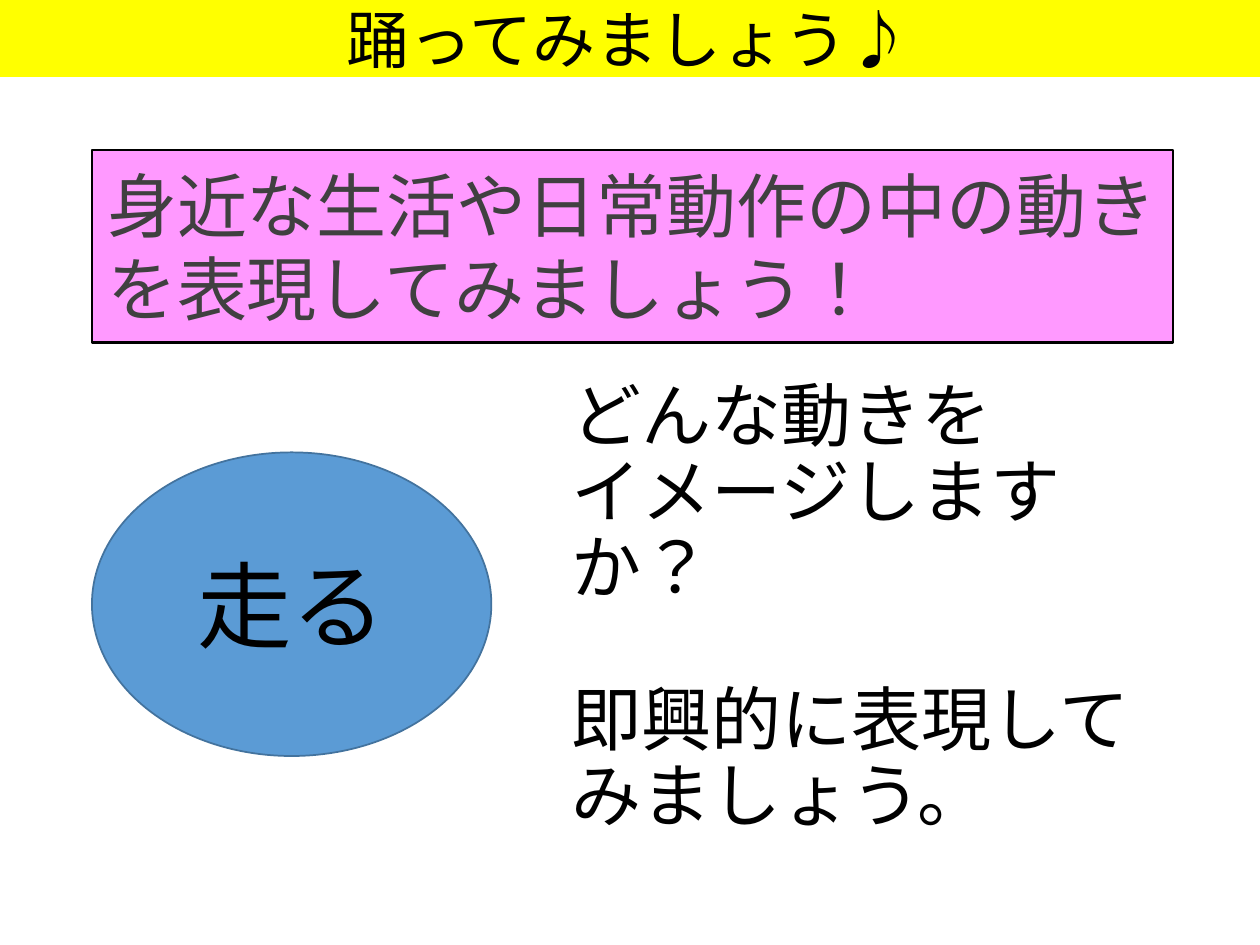
"""Build a dance lesson slide with a theme word and a prompt."""
from dataclasses import dataclass

from pptx import Presentation
from pptx.dml.color import RGBColor as Rgb
from pptx.enum.lang import MSO_LANGUAGE_ID as Lang
from pptx.enum.shapes import MSO_SHAPE as Shape
from pptx.enum.text import MSO_ANCHOR as Anchor, PP_ALIGN as Align
from pptx.oxml.ns import qn
from pptx.util import Inches, Pt


@dataclass(frozen=True)
class Theme:
    font: str = "Noto Sans CJK JP"
    ink: str = "000000"
    gray: str = "404040"
    pink: str = "FF99FF"
    blue: str = "5B9BD5"
    edge: str = "43739E"
    gold: str = "FFFF00"
    head: int = 36
    body: int = 40
    word: int = 54


THEME = Theme()


def add_run(para, text, size, color):
    run = para.add_run()
    run.text = text
    font = run.font
    font.name = THEME.font
    font.size = Pt(size)
    font.language_id = Lang.JAPANESE
    font.color.rgb = Rgb.from_string(color)
    east = run._r.get_or_add_rPr().makeelement(qn("a:ea"), {"typeface": THEME.font})
    font._element.find(qn("a:latin")).addnext(east)


def add_para(para, lines, size, color, align=Align.LEFT, pitch=None, before=0):
    para.alignment = align
    para.space_before = Pt(before)
    if pitch:
        para.line_spacing = Pt(pitch)
    for i, line in enumerate(lines):
        if i:
            para.add_line_break()
        add_run(para, line, size, color)


def set_frame(frame, wrap=True):
    frame.word_wrap = wrap
    frame.vertical_anchor = Anchor.MIDDLE
    return frame


def add_box(slide, kind, area, fill, line=None, width=1, wrap=True):
    box = slide.shapes.add_shape(kind, *map(Inches, area))
    box.shadow.inherit = False
    box.fill.solid()
    box.fill.fore_color.rgb = Rgb.from_string(fill)
    if line:
        box.line.color.rgb = Rgb.from_string(line)
        box.line.width = Pt(width)
    else:
        box.line.fill.background()
    return set_frame(box.text_frame, wrap)


def add_prompt(slide, area, parts, pitch):
    frame = set_frame(slide.shapes.add_textbox(*map(Inches, area)).text_frame)
    for i, lines in enumerate(parts):
        para = frame.add_paragraph() if i else frame.paragraphs[0]
        add_para(para, lines, THEME.body, THEME.ink, pitch=pitch,
                 before=pitch if i else 0)


def main():
    deck = Presentation()
    deck.slide_width, deck.slide_height = Inches(10), Inches(7.5)
    slide = deck.slides.add_slide(deck.slide_layouts[6])

    add_prompt(slide, (4.44, 2.61, 5.05, 4.43), [
        ("どんな動きを", "イメージしますか？"),
        ("即興的に表現して", "みましょう。"),
    ], 43.4)

    task = add_box(slide, Shape.RECTANGLE, (0.73, 1.19, 8.58, 1.53),
                   THEME.pink, THEME.ink, 1.5)
    task.margin_left = Inches(0.12)
    add_para(task.paragraphs[0],
             ["身近な生活や日常動作の中の動きを表現してみましょう！"],
             THEME.body, THEME.gray, pitch=47.4, before=10)

    word = add_box(slide, Shape.OVAL, (0.73, 3.59, 3.17, 2.41),
                   THEME.blue, THEME.edge)
    add_para(word.paragraphs[0], ["走る"], THEME.word, THEME.ink, Align.CENTER)

    head = add_box(slide, Shape.RECTANGLE, (-0.02, 0, 10.02, 0.61),
                   THEME.gold, wrap=False)
    head.margin_left = head.margin_right = Inches(0.07)
    head.margin_top = head.margin_bottom = Inches(0.04)
    add_para(head.paragraphs[0], ["踊ってみましょう♪"],
             THEME.head, THEME.ink, Align.CENTER)

    deck.save("out.pptx")


if __name__ == "__main__":
    main()
